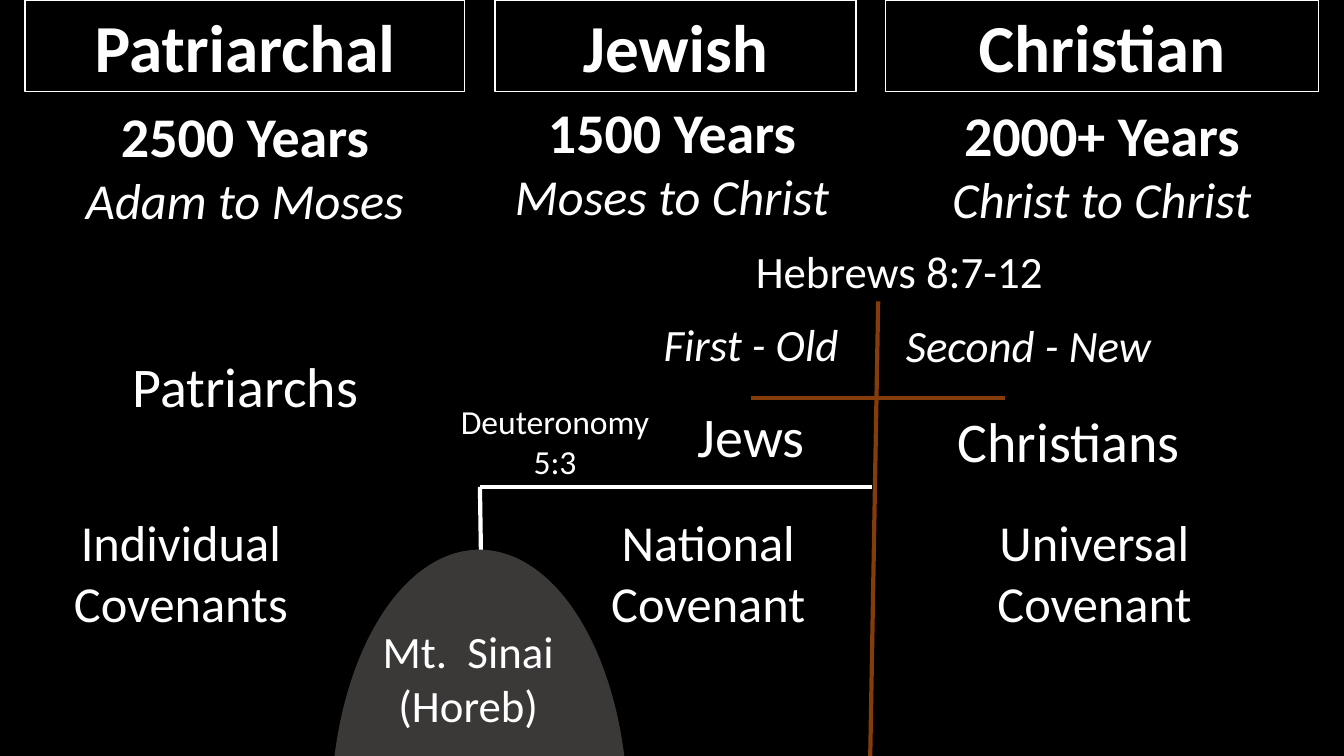
from lxml import etree
from pptx import Presentation
from pptx import util as u
from pptx.dml.color import RGBColor
from pptx.enum import shapes, text
from pptx.oxml.ns import qn

PX = 9144  # EMU per px, 100 px to the inch


class Theme:
    font = "Calibri"
    background = RGBColor(0x00, 0x00, 0x00)
    ink = RGBColor(0xFF, 0xFF, 0xFF)
    cross = RGBColor(0x84, 0x3C, 0x0B)
    mountain = RGBColor(0x3B, 0x38, 0x38)
    title, large, medium, small, note = 48, 40, 36, 32, 24
    outline, stroke = 1, 3


FRAME_FORMAT = {
    "word_wrap": True,
    "auto_size": text.MSO_AUTO_SIZE.SHAPE_TO_FIT_TEXT,
    "vertical_anchor": text.MSO_ANCHOR.MIDDLE,
}


def px(*lengths):
    return [u.Emu(length * PX) for length in lengths]


def set_attributes(target, values):
    for name, value in values.items():
        setattr(target, name, value)


def write_lines(shape, lines):
    """Fill a shape with centred paragraphs given as (words, size, font format)."""
    frame = shape.text_frame
    set_attributes(frame, FRAME_FORMAT)
    for index, (words, size, font_format) in enumerate(lines):
        paragraph = frame.add_paragraph() if index else frame.paragraphs[0]
        paragraph.alignment = text.PP_ALIGN.CENTER
        run = paragraph.add_run()
        run.text = words
        set_attributes(run.font, {"name": Theme.font, "size": u.Pt(size), **font_format})
        run.font.color.rgb = Theme.ink


def add_label(slide, box, lines):
    write_lines(slide.shapes.add_textbox(*px(*box)), lines)


def add_outlined_shape(slide, kind, box, line_colour):
    shape = slide.shapes.add_shape(kind, *px(*box))
    shape.shadow.inherit = False
    shape.fill.background()
    shape.line.color.rgb = line_colour
    shape.line.width = u.Pt(Theme.outline)
    return shape


def add_age(slide, name, title_box, years, span, span_box):
    title = add_outlined_shape(slide, shapes.MSO_SHAPE.RECTANGLE, title_box, Theme.ink)
    write_lines(title, [(name, Theme.title, {"bold": True})])
    add_label(slide, span_box, [
        (years, Theme.large, {"bold": True}),
        (span, Theme.medium, {"italic": True}),
    ])


def add_line(slide, ends, colour):
    line = slide.shapes.add_connector(shapes.MSO_CONNECTOR.STRAIGHT, *px(*ends))
    line.line.color.rgb = colour
    line.line.width = u.Pt(Theme.stroke)
    etree.SubElement(line._element.spPr, qn("a:effectLst"))


def add_mountain(slide, box):
    mountain = add_outlined_shape(slide, shapes.MSO_SHAPE.OVAL, box, Theme.mountain)
    mountain.fill.solid()
    mountain.fill.fore_color.rgb = Theme.mountain


def main():
    presentation = Presentation()
    presentation.slide_width, presentation.slide_height = px(1333, 750)
    slide = presentation.slides.add_slide(presentation.slide_layouts[6])
    slide.background.fill.solid()
    slide.background.fill.fore_color.rgb = Theme.background

    # The three ages
    ages = [
        ("Patriarchal", (25, 0, 436, 91), "2500 Years", "Adam to Moses", (25, 95, 436, 138)),
        ("Jewish", (491, 0, 358, 91), "1500 Years", "Moses to Christ", (473, 91, 387, 138)),
        ("Christian", (878, 0, 430, 91), "2000+ Years", "Christ to Christ", (878, 94, 430, 138)),
    ]
    for age in ages:
        add_age(slide, *age)

    # Cross, then the line from Sinai to the cross
    for ends in [(871, 299, 863, 757), (997, 395, 745, 395)]:
        add_line(slide, ends, Theme.cross)
    for ends in [(476, 483, 865, 483), (476, 483, 477, 546)]:
        add_line(slide, ends, Theme.ink)
    add_mountain(slide, (329, 546, 293, 521))

    # Peoples, covenants, places and references
    italic = {"italic": True}
    labels = [
        ((97, 344, 293, 77), Theme.large, {}, ["Patriarchs"]),
        ((939, 398, 242, 77), Theme.large, {}, ["Christians"]),
        ((611, 393, 268, 77), Theme.large, {}, ["Jews"]),
        ((33, 502, 293, 131), Theme.medium, {}, ["Individual", "Covenants"]),
        ((556, 502, 293, 131), Theme.medium, {}, ["National", "Covenant"]),
        ((939, 502, 293, 131), Theme.medium, {}, ["Universal", "Covenant"]),
        ((318, 613, 293, 118), Theme.small, {}, ["Mt.  Sinai", "(Horeb)"]),
        ((643, 309, 204, 64), Theme.small, italic, ["First - Old"]),
        ((884, 310, 272, 64), Theme.small, italic, ["Second - New"]),
        ((725, 236, 334, 64), Theme.small, {}, ["Hebrews 8:7-12"]),
        ((442, 392, 217, 91), Theme.note, {}, ["Deuteronomy", "5:3"]),
    ]
    for box, size, font_format, lines in labels:
        add_label(slide, box, [(words, size, font_format) for words in lines])

    presentation.save("out.pptx")


if __name__ == "__main__":
    main()
